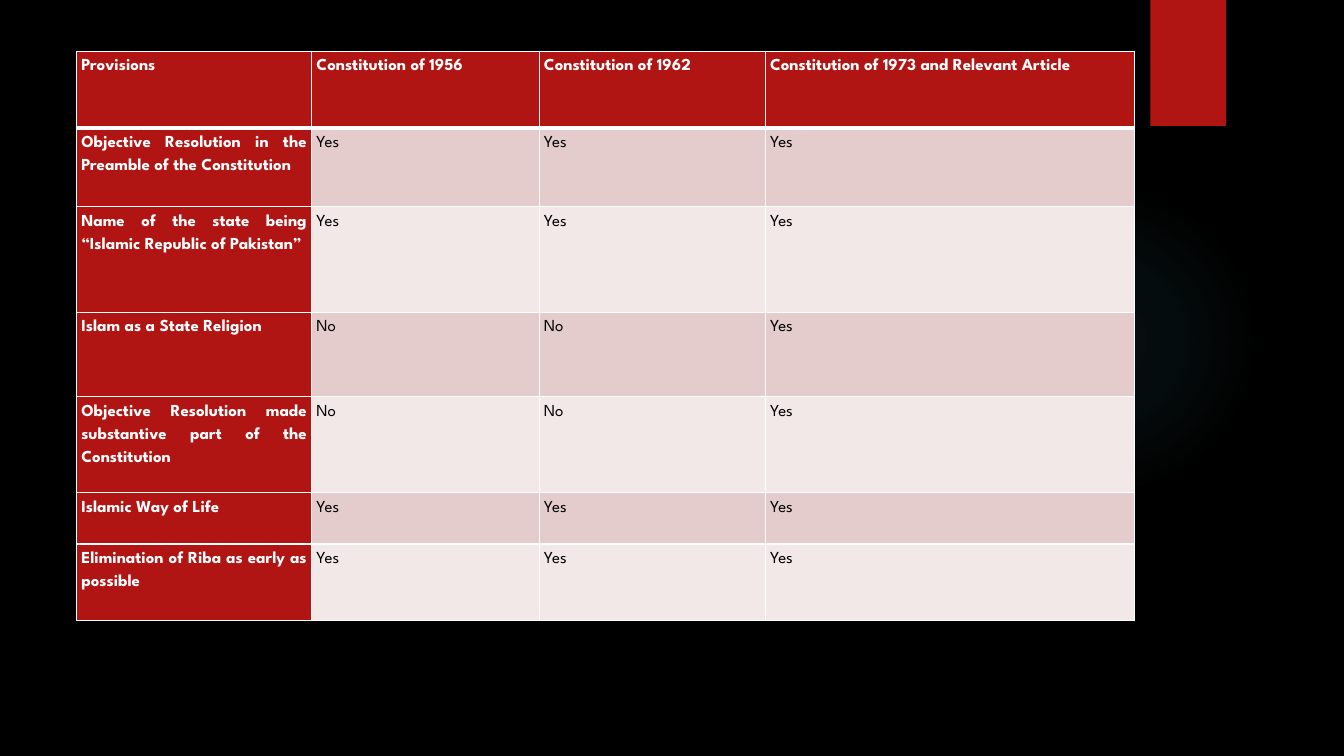
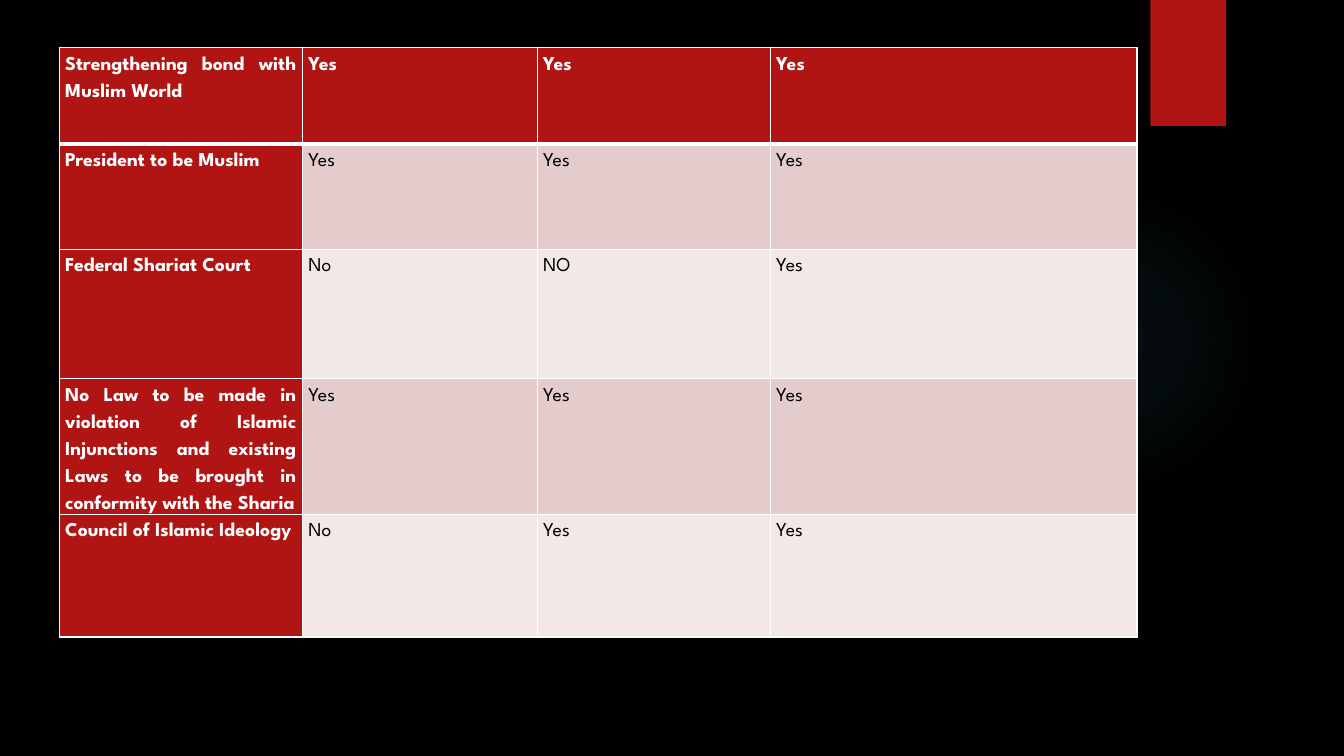
from dataclasses import dataclass

from lxml import etree
from pptx import Presentation
from pptx import util as u
from pptx.dml import color
from pptx.enum import shapes, text
from pptx.oxml import ns

Pt = u.Pt


@dataclass(frozen=True)
class Theme:
    font: str = "League Spartan"
    background: str = "000000"
    accent: str = "B01513"
    glow: str = "50B9C1"
    light: str = "FFFFFF"
    dark: str = "000000"
    bands: tuple = ("E4CCCC", "F2E8E7")
    line_spacing: float = 1.5
    thin: int = 1
    thick: int = 3


theme = Theme()


def add_xml(parent, tag, **attributes):
    values = {name: str(value) for name, value in attributes.items()}
    return etree.SubElement(parent, ns.qn(tag), values)


def paint(fill, value):
    fill.solid()
    fill.fore_color.rgb = color.RGBColor.from_string(value)


tables = [
    {
        "left": 54.7, "top": 36.8, "size": 12, "margin": 3.4,
        "columns": (168, 162.5, 161.5, 264),
        "heights": (54.9, 55.9, 75.5, 60.4, 68.4, 36.7, 54.7),
        "rows": (
            ("Provisions", "Constitution of 1956", "Constitution of 1962",
             "Constitution of 1973 and Relevant Article"),
            ("Objective Resolution in the Preamble of the Constitution", "Yes", "Yes", "Yes"),
            ("Name of the state being “Islamic Republic of Pakistan”", "Yes", "Yes", "Yes"),
            ("Islam as a State Religion", "No", "No", "Yes"),
            ("Objective Resolution made substantive part of the Constitution", "No", "No", "Yes"),
            ("Islamic Way of Life", "Yes", "Yes", "Yes"),
            ("Elimination of Riba as early as possible", "Yes", "Yes", "Yes"),
        ),
    },
    {
        "left": 42.3, "top": 33.8, "size": 14, "margin": 4.3,
        "columns": (173.7, 167.7, 166.5, 262),
        "heights": (69.2, 75, 92.2, 97, 87.8),
        "rows": (
            ("Strengthening bond with Muslim World", "Yes", "Yes", "Yes"),
            ("President to be Muslim", "Yes", "Yes", "Yes"),
            ("Federal Shariat Court", "No", "NO", "Yes"),
            ("No Law to be made in violation of Islamic Injunctions and existing Laws "
             "to be brought in conformity with the Sharia", "Yes", "Yes", "Yes"),
            ("Council of Islamic Ideology", "No", "Yes", "Yes"),
        ),
    },
]

deck = Presentation()
deck.slide_width, deck.slide_height = Pt(960), Pt(540)
master = deck.slide_master
paint(master.background.fill, theme.background)
pages = [deck.slides.add_slide(deck.slide_layouts[6]) for table in tables]

glow = pages[0].shapes.add_shape(
    shapes.MSO_SHAPE.OVAL, Pt(677.5), Pt(131.8), Pt(221.8), Pt(221.8))
ribbon = pages[0].shapes.add_shape(
    shapes.MSO_SHAPE.RECTANGLE, Pt(821.8), Pt(0), Pt(54), Pt(90))
for shape in (glow, ribbon):
    paint(shape.fill, theme.accent)
    shape.line.fill.background()
    shape.shadow.inherit = False
    master.element.cSld.spTree.append(shape.element)

gradient = etree.Element(ns.qn("a:gradFill"), {"rotWithShape": "1"})
stops = add_xml(gradient, "a:gsLst")
for position, opacity in ((0, 7), (36, 6), (69, 0)):
    stop = add_xml(stops, "a:gs", pos=position * 1000)
    add_xml(add_xml(stop, "a:srgbClr", val=theme.glow), "a:alpha", val=opacity * 1000)
circle = add_xml(gradient, "a:path", path="circle")
add_xml(circle, "a:fillToRect", l=50000, t=50000, r=50000, b=50000)
solid = glow.element.spPr.find(ns.qn("a:solidFill"))
glow.element.spPr.replace(solid, gradient)

effects = ribbon.element.spPr.find(ns.qn("a:effectLst"))
shadow = add_xml(effects, "a:outerShdw", blurRad=Pt(3), dist=Pt(2), dir=90 * 60000)
add_xml(add_xml(shadow, "a:srgbClr", val=theme.dark), "a:alpha", val=45000)

for page, content in zip(pages, tables):
    rows, columns, heights = content["rows"], content["columns"], content["heights"]
    table = page.shapes.add_table(
        len(rows), len(columns), Pt(content["left"]), Pt(content["top"]),
        Pt(sum(columns)), Pt(sum(heights))).table
    for column, width in zip(table.columns, columns):
        column.width = Pt(width)
    for row, height in zip(table.rows, heights):
        row.height = Pt(height)

    for row_index, row in enumerate(rows):
        for column_index, words in enumerate(row):
            cell = table.cell(row_index, column_index)
            heading = row_index == 0 or column_index == 0
            cell_format = {
                "margin_left": Pt(content["margin"]), "margin_right": Pt(content["margin"]),
                "margin_top": 0, "margin_bottom": 0,
                "vertical_anchor": text.MSO_ANCHOR.TOP,
            }
            for name, value in cell_format.items():
                setattr(cell, name, value)

            properties = cell._tc.get_or_add_tcPr()
            widths = {
                "L": theme.thin, "R": theme.thin,
                "T": theme.thick if row_index == 1 else theme.thin,
                "B": theme.thick if row_index == 0 else theme.thin,
            }
            for side, width in widths.items():
                border = add_xml(properties, f"a:ln{side}", w=Pt(width))
                add_xml(add_xml(border, "a:solidFill"), "a:srgbClr", val=theme.light)
            paint(cell.fill, theme.accent if heading else theme.bands[(row_index - 1) % 2])

            para = cell.text_frame.paragraphs[0]
            para.alignment = text.PP_ALIGN.JUSTIFY
            para.line_spacing = theme.line_spacing
            span = para.add_run()
            span.text = words
            font_format = {"name": theme.font, "size": Pt(content["size"]), "bold": heading}
            for name, value in font_format.items():
                setattr(span.font, name, value)
            span.font.color.rgb = color.RGBColor.from_string(
                theme.light if heading else theme.dark)

deck.save("out.pptx")
